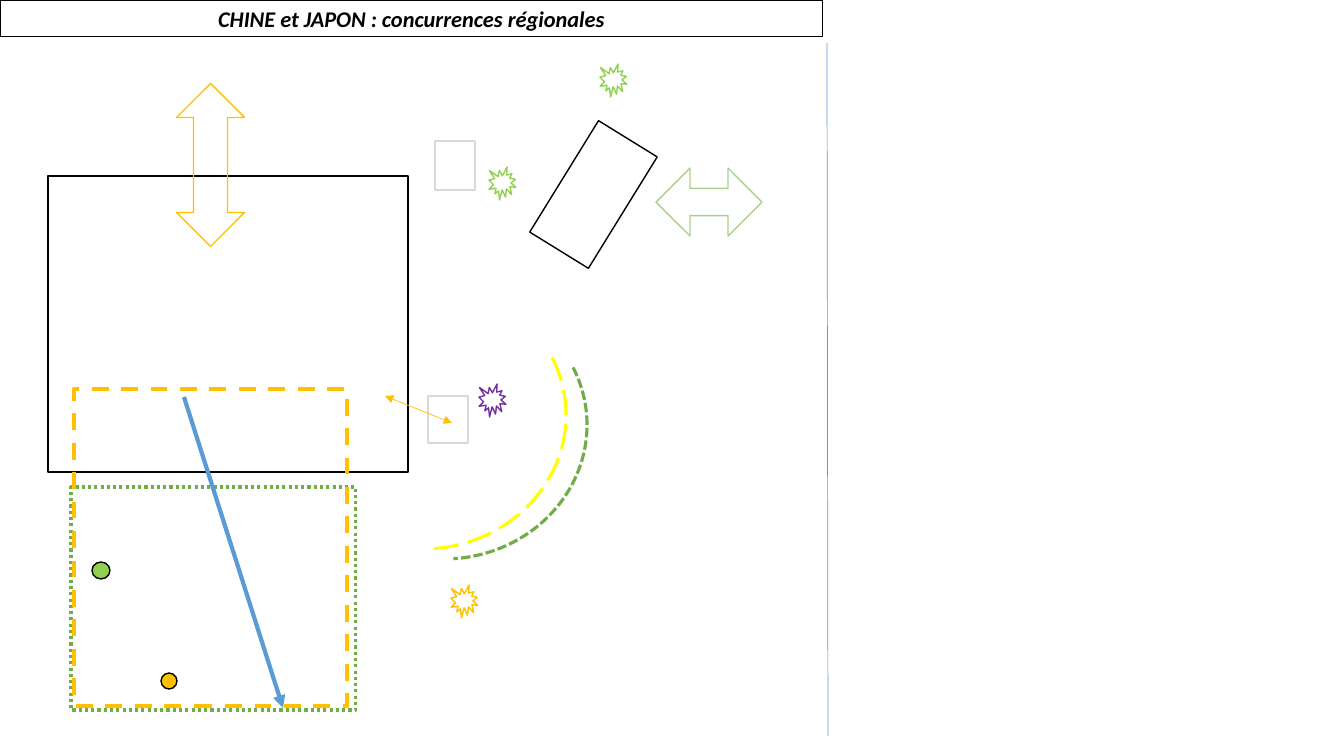
"""Builds the slide with the sketch map of Chinese and Japanese regional rivalry."""
from lxml import etree
from pptx import Presentation
from pptx.dml.color import RGBColor
from pptx.enum.dml import MSO_LINE_DASH_STYLE as Dash
from pptx.enum.shapes import MSO_CONNECTOR, MSO_SHAPE as Preset
from pptx.enum.text import MSO_ANCHOR, MSO_AUTO_SIZE, PP_ALIGN
from pptx.oxml.ns import qn
from pptx.util import Emu, Pt

BLACK = RGBColor(0x00, 0x00, 0x00)
GREY = RGBColor(0xD9, 0xD9, 0xD9)
LIME = RGBColor(0x92, 0xD0, 0x50)
GREEN = RGBColor(0x70, 0xAD, 0x47)
PALE_GREEN = RGBColor(0xA9, 0xD1, 0x8E)
GOLD = RGBColor(0xFF, 0xC0, 0x00)
YELLOW = RGBColor(0xFF, 0xFF, 0x00)
PURPLE = RGBColor(0x70, 0x30, 0xA0)
BLUE = RGBColor(0x5B, 0x9B, 0xD5)

TITLE = "CHINE et JAPON : concurrences régionales"
TITLE_BOX = (0, 0, 823, 37)
SLIDE_SIZE = (1344, 756)
EMU_PER_PX = 914400 / 100.8

# (box, rotation, line colour)
COUNTRIES = [
    ((48, 176, 360, 296), 0, BLACK),
    ((528, 160, 131, 69), 301.7, BLACK),
    ((435, 141, 40, 49), 0, GREY),
    ((428, 396, 40, 47), 0, GREY),
]
# (box, line colour, width, dash)
ZONES = [
    ((71, 487, 285, 223), GREEN, 2.25, Dash.ROUND_DOT),
    ((74, 389, 273, 317), GOLD, 3, Dash.DASH),
]
# (box, fill colour)
BASES = [((161, 673, 16, 16), GOLD), ((92, 562, 18, 17), LIME)]
# (left, top, line colour)
TENSIONS = [(600, 64, LIME), (489, 167, LIME), (479, 384, PURPLE), (451, 585, GOLD)]
TENSION_SIZE = (27, 33)
# (box, rotation, adjustments, line colour)
EXCHANGES = [
    ((129, 131, 163, 68), 90, (0.5, 0.5), GOLD),
    ((656, 168, 106, 68), 180, (0.402, 0.5), PALE_GREEN),
]
# (left, top, line colour, dash)
ISLAND_CHAINS = [(312, 284, GREEN, Dash.SQUARE_DOT), (291, 274, YELLOW, Dash.LONG_DASH)]
CHAIN_SIZE, CHAIN_ROTATION, CHAIN_ANGLES = (266, 284), 86.4, (149.407, 0)
# (start and end, line colour, width, arrowheads)
LINES = [
    ((184, 397, 283, 708), BLUE, 3, ("tailEnd",)),
    ((385, 396, 452, 423), GOLD, 0.5, ("headEnd", "tailEnd")),
    ((827, 43, 828, 736), BLUE, 0.5, ()),
]


def px(values):
    return [Emu(round(value * EMU_PER_PX)) for value in values]


def style_line(line, color, width, dash=None):
    line.color.rgb = color
    line.width = Pt(width)
    if dash is not None:
        line.dash_style = dash


def add_outline(slide, preset, box, color, width=1, dash=None, rotation=0, adjustments=(), fill=None):
    shape = slide.shapes.add_shape(preset, *px(box))
    shape.shadow.inherit = False
    shape.rotation = rotation
    for index, value in enumerate(adjustments):
        shape.adjustments[index] = value
    if fill is None:
        shape.fill.background()
    else:
        shape.fill.solid()
        shape.fill.fore_color.rgb = fill
    style_line(shape.line, color, width, dash)


def add_line(slide, ends, color, width, arrowheads):
    connector = slide.shapes.add_connector(MSO_CONNECTOR.STRAIGHT, *px(ends))
    style_line(connector.line, color, width)
    properties = connector._element.spPr
    outline = properties.find(qn("a:ln"))
    for arrowhead in arrowheads:
        etree.SubElement(outline, qn(f"a:{arrowhead}"), type="triangle")
    etree.SubElement(properties, qn("a:effectLst"))


def add_title(slide):
    title = slide.shapes.title
    title.left, title.top, title.width, title.height = px(TITLE_BOX)
    style_line(title.line, BLACK, 0.75)
    frame = title.text_frame
    frame.text = TITLE
    frame.auto_size = MSO_AUTO_SIZE.NONE
    frame.vertical_anchor = MSO_ANCHOR.MIDDLE
    paragraph = frame.paragraphs[0]
    paragraph.alignment = PP_ALIGN.CENTER
    font = paragraph.runs[0].font
    font.name, font.size = "Calibri", Pt(16)
    font.bold = font.italic = True
    font.color.rgb = BLACK


def main():
    presentation = Presentation()
    presentation.slide_width, presentation.slide_height = px(SLIDE_SIZE)
    slide = presentation.slides.add_slide(presentation.slide_layouts.get_by_name("Title Only"))
    add_title(slide)
    for box, rotation, color in COUNTRIES:
        add_outline(slide, Preset.RECTANGLE, box, color, rotation=rotation)
    for box, color, width, dash in ZONES:
        add_outline(slide, Preset.RECTANGLE, box, color, width, dash)
    for box, fill in BASES:
        add_outline(slide, Preset.OVAL, box, BLACK, fill=fill)
    for left, top, color in TENSIONS:
        add_outline(slide, Preset.EXPLOSION1, (left, top, *TENSION_SIZE), color)
    for box, rotation, adjustments, color in EXCHANGES:
        add_outline(slide, Preset.LEFT_RIGHT_ARROW, box, color,
                    rotation=rotation, adjustments=adjustments)
    for left, top, color, dash in ISLAND_CHAINS:
        add_outline(slide, Preset.ARC, (left, top, *CHAIN_SIZE), color, 2.25, dash,
                    CHAIN_ROTATION, CHAIN_ANGLES)
    for line in LINES:
        add_line(slide, *line)
    presentation.save("out.pptx")


if __name__ == "__main__":
    main()
